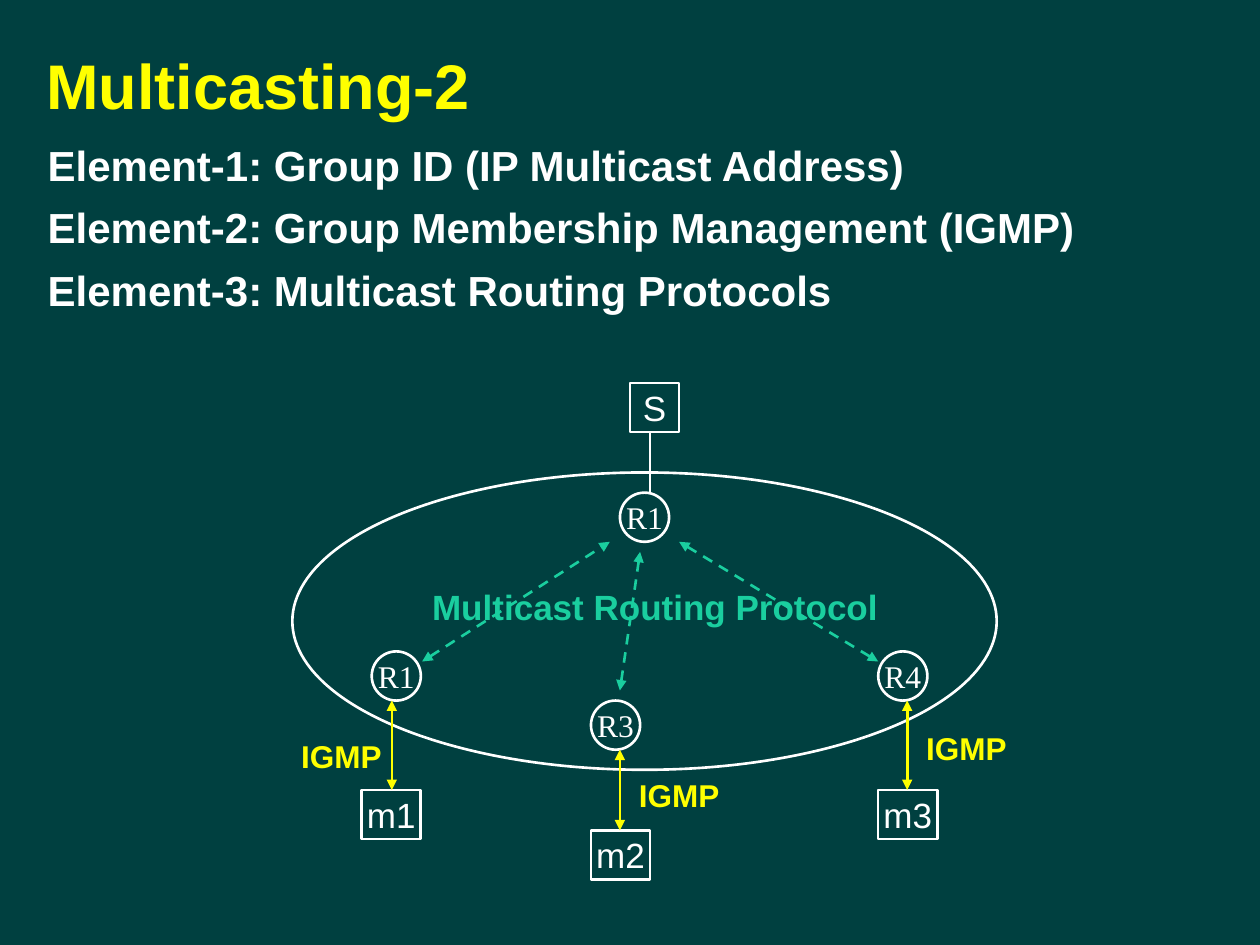
from pptx import Presentation
from pptx.dml.color import RGBColor
from pptx.enum.dml import MSO_LINE
from pptx.enum.shapes import MSO_CONNECTOR, MSO_SHAPE
from pptx.enum.text import MSO_ANCHOR, PP_ALIGN
from pptx.oxml.ns import qn
from pptx.util import Inches, Pt
from lxml import etree

STRAIGHT = MSO_CONNECTOR.STRAIGHT
RECTANGLE, OVAL = MSO_SHAPE.RECTANGLE, MSO_SHAPE.OVAL
MIDDLE = MSO_ANCHOR.MIDDLE
LEFT, CENTER = PP_ALIGN.LEFT, PP_ALIGN.CENTER
DASH = MSO_LINE.DASH

BACKGROUND, WHITE, YELLOW, GREEN = "004040", "FFFFFF", "FFFF00", "1ACE9F"
NODE_SIZE, HOST_WIDTH = 0.39, 0.47

TITLE_FONT = {"name": "Arial", "size": Pt(36), "bold": True}
BODY_FONT = {"name": "Arial", "size": Pt(24), "bold": True}
PROTOCOL_FONT = {"name": "Arial", "size": Pt(20), "bold": True}
LABEL_FONT = {"name": "Arial", "size": Pt(18), "bold": True}
HOST_FONT = {"name": "Arial", "size": Pt(20), "bold": False}
ROUTER_FONT = {"name": "Times New Roman", "size": Pt(18), "bold": False}

ELEMENTS = [
    "Element-1: Group ID (IP Multicast Address)",
    "Element-2: Group Membership Management (IGMP)",
    "Element-3: Multicast Routing Protocols",
]
HOSTS = [
    ("S", 5, 3.04, NODE_SIZE),
    ("m1", 2.87, 6.27, HOST_WIDTH),
    ("m2", 4.69, 6.59, HOST_WIDTH),
    ("m3", 6.97, 6.27, HOST_WIDTH),
]
ROUTERS = [("R1", 4.92, 3.91), ("R1", 2.95, 5.17), ("R3", 4.69, 5.56), ("R4", 6.97, 5.17)]
MEMBER_LINKS = [(3.11, 5.56, 3.11, 6.27), (4.92, 5.95, 4.92, 6.59), (7.2, 5.56, 7.2, 6.27)]
MEMBER_LABELS = [(7.2, 5.74), (4.92, 6.11), (2.24, 5.8)]
ROUTING_LINKS = [(3.35, 5.25, 4.84, 4.3), (4.92, 5.48, 5.08, 4.38), (6.97, 5.25, 5.39, 4.3)]


def color(code):
    """Turn a hex string into a colour."""
    return RGBColor.from_string(code)


def set_values(target, values):
    """Set each named attribute on the target."""
    for name, value in values.items():
        setattr(target, name, value)


def write(box, lines, font, code, align=CENTER, wrap=True, spacing=None):
    """Fill a box with one formatted paragraph per line."""
    frame = box.text_frame
    set_values(frame, {"word_wrap": wrap, "vertical_anchor": MIDDLE})
    for index, line in enumerate(lines):
        para = frame.add_paragraph() if index else frame.paragraphs[0]
        set_values(para, {"alignment": align, **(spacing or {})})
        span = para.add_run()
        span.text = line
        set_values(span.font, font)
        span.font.color.rgb = color(code)


def add_label(page, area, lines, font, code, **options):
    """Add a text box."""
    box = page.shapes.add_textbox(*map(Inches, area))
    write(box, lines, font, code, **options)
    return box


def add_outline(page, kind, area):
    """Add an unfilled shape with a white outline."""
    shape = page.shapes.add_shape(kind, *map(Inches, area))
    shape.shadow.inherit = False
    shape.fill.background()
    shape.line.color.rgb = color(WHITE)
    shape.line.width = Pt(1.5)
    return shape


def add_link(page, ends, code, arrows=True, dash=None):
    """Add a straight link, with arrowheads at both ends if wanted."""
    link = page.shapes.add_connector(STRAIGHT, *map(Inches, ends))
    link.line.color.rgb = color(code)
    set_values(link.line, {"width": Pt(1.5), "dash_style": dash})
    properties = link._element.spPr
    if arrows:
        outline = properties.find(qn("a:ln"))
        for tag in ("a:headEnd", "a:tailEnd"):
            etree.SubElement(outline, qn(tag), type="triangle")
    etree.SubElement(properties, qn("a:effectLst"))


def add_title(page, text):
    """Place and format the title."""
    title = page.shapes.title
    names = ("left", "top", "width", "height")
    set_values(title, dict(zip(names, map(Inches, (0.2, 0.21, 3.7, 0.92)))))
    write(title, [text], TITLE_FONT, YELLOW)


def add_network(page):
    """Draw the hosts, the routers and the links between them."""
    for name, left, top, width in HOSTS:
        host = add_outline(page, RECTANGLE, (left, top, width, NODE_SIZE))
        write(host, [name], HOST_FONT, WHITE, wrap=False)
    add_outline(page, OVAL, (2.32, 3.75, 5.59, 2.36))
    for name, left, top in ROUTERS:
        router = add_outline(page, OVAL, (left, top, NODE_SIZE, NODE_SIZE))
        write(router, [name], ROUTER_FONT, WHITE, wrap=False)
    add_link(page, (5.16, 3.44, 5.16, 3.91), WHITE, arrows=False)
    for ends in MEMBER_LINKS:
        add_link(page, ends, YELLOW)
    for left, top in MEMBER_LABELS:
        add_label(page, (left, top, 0.94, 0.39), ["IGMP"], LABEL_FONT, YELLOW)
    for ends in ROUTING_LINKS:
        add_link(page, ends, GREEN, dash=DASH)
    add_label(page, (3.27, 4.62, 3.86, 0.39), ["Multicast Routing Protocol"], PROTOCOL_FONT, GREEN)


def main():
    """Build and save the deck."""
    deck = Presentation()
    deck.slide_width, deck.slide_height = Inches(10), Inches(7.5)
    page = deck.slides.add_slide(deck.slide_layouts[5])
    page.background.fill.solid()
    page.background.fill.fore_color.rgb = color(BACKGROUND)
    add_title(page, "Multicasting-2")
    spacing = {"line_spacing": 1.2, "space_before": Pt(1.2)}
    body = add_label(page, (0.28, 0.91, 8.35, 1.7), ELEMENTS, BODY_FONT, WHITE,
                     align=LEFT, spacing=spacing)
    body.text_frame.margin_right = 0
    add_network(page)
    deck.save("out.pptx")


if __name__ == "__main__":
    main()
